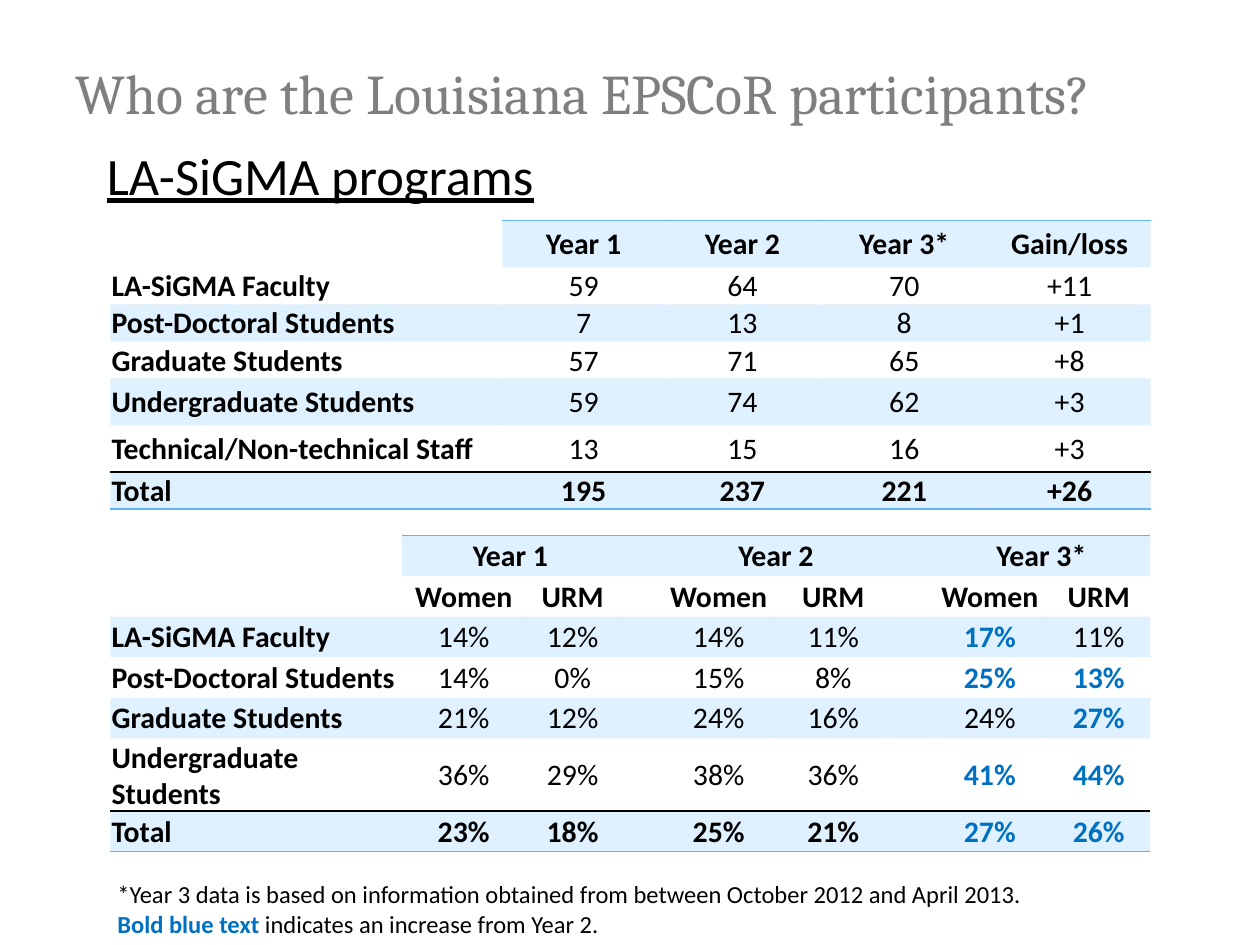
from lxml import etree
from pptx import Presentation
from pptx.dml.color import RGBColor
from pptx.enum import text
from pptx.oxml import ns
from pptx.util import Pt

COLORS = {"title": "7F7F7F", "text": "000000", "band": "61B4FA", "gain": "0070C0"}
NO_STYLE = "{2D5ABB26-0587-4C30-8999-92F81FD0307C}"

COUNT_WIDTHS = [224, 93, 88.5, 96.5, 92.5]
COUNT_HEIGHTS = [26.8, 20.9, 20.9, 20.9, 26.8, 26.8, 20.9]
COUNTS = [
    ["", "Year 1", "Year 2", "Year 3*", "Gain/loss"],
    ["LA-SiGMA Faculty", "59", "64", "70", "+11"],
    ["Post-Doctoral Students", "7", "13", "8", "+1"],
    ["Graduate Students", "57", "71", "65", "+8"],
    ["Undergraduate Students", "59", "74", "62", "+3"],
    ["Technical/Non-technical Staff", "13", "15", "16", "+3"],
    ["Total", "195", "237", "221", "+26"],
]

# Each year is a pair of columns; narrow empty columns separate the years
SHARE_WIDTHS = [166.5, 71, 53.5, 24, 65.5, 65.5, 24, 65.5, 59]
SHARE_HEIGHTS = [23.2] * 5 + [41.6, 23.2]
SHARES = [
    ["", "Year 1", "", "", "Year 2", "", "", "Year 3*", ""],
    ["", "Women", "URM", "", "Women", "URM", "", "Women", "URM"],
    ["LA-SiGMA Faculty", "14%", "12%", "", "14%", "11%", "", "17%", "11%"],
    ["Post-Doctoral Students", "14%", "0%", "", "15%", "8%", "", "25%", "13%"],
    ["Graduate Students", "21%", "12%", "", "24%", "16%", "", "24%", "27%"],
    ["Undergraduate Students", "36%", "29%", "", "38%", "36%", "", "41%", "44%"],
    ["Total", "23%", "18%", "", "25%", "21%", "", "27%", "26%"],
]


def set_font(font, size, color="text", name="Calibri", bold=False):
    font.size, font.name, font.bold = Pt(size), name, bold
    font.color.rgb = RGBColor.from_string(COLORS[color])


def add_text_box(slide, left, top, width, height):
    frame = slide.shapes.add_textbox(Pt(left), Pt(top), Pt(width), Pt(height)).text_frame
    frame.word_wrap = True
    return frame


def add_heading(slide, left, top, width, height, wording, size, **style):
    frame = add_text_box(slide, left, top, width, height)
    paragraph = frame.paragraphs[0]
    paragraph.text = wording
    set_font(paragraph.font, size, **style)
    return frame


def add_border(cell, side, color):
    properties = cell._tc.get_or_add_tcPr()
    line = etree.Element(ns.qn("a:ln" + side), w=str(Pt(1)))
    fill = etree.SubElement(line, ns.qn("a:solidFill"))
    etree.SubElement(fill, ns.qn("a:srgbClr"), val=COLORS[color])
    # Borders come before the fill, top before bottom
    properties.insert(len(properties.findall(ns.qn("a:lnT"))), line)


def fill_band(cell):
    cell.fill.solid()
    cell.fill.fore_color.rgb = RGBColor.from_string(COLORS["band"])
    color = cell._tc.tcPr.find(".//" + ns.qn("a:srgbClr"))
    etree.SubElement(color, ns.qn("a:alpha"), val="20000")


def is_gain(row, column):
    """True where a Year 3 share is above the Year 2 share three columns before."""
    if column < 7 or not row[column].endswith("%"):
        return False
    return int(row[column][:-1]) > int(row[column - 3][:-1])


def add_data_table(slide, left, top, widths, heights, rows, header_rows, spans=()):
    frame = slide.shapes.add_table(len(rows), len(widths), Pt(left), Pt(top),
                                   Pt(sum(widths)), Pt(sum(heights)))
    table = frame.table
    table._tbl.tblPr.find(ns.qn("a:tableStyleId")).text = NO_STYLE
    for column, width in zip(table.columns, widths):
        column.width = Pt(width)
    for table_row, height in zip(table.rows, heights):
        table_row.height = Pt(height)

    last = len(rows) - 1
    for i, row in enumerate(rows):
        for j, wording in enumerate(row):
            cell = table.cell(i, j)
            cell.margin_left = cell.margin_right = cell.margin_top = Pt(0.72)
            cell.margin_bottom = Pt(0)
            cell.vertical_anchor = text.MSO_ANCHOR.MIDDLE
            paragraph = cell.text_frame.paragraphs[0]
            paragraph.text = wording
            paragraph.alignment = text.PP_ALIGN.CENTER if j else text.PP_ALIGN.LEFT
            gain = is_gain(row, j)
            bold = gain or j == 0 or i < header_rows or i == last
            set_font(paragraph.font, 17, "gain" if gain else "text", bold=bold)

            # Every other row is tinted, except the empty corner
            corner = i == 0 and j == 0
            if i % 2 == 0 and not corner:
                fill_band(cell)
            else:
                cell.fill.background()
            if i == 0 and not corner:
                add_border(cell, "T", "band")
            if i == last - 1:
                add_border(cell, "B", "text")
            if i == last:
                add_border(cell, "T", "text")
                add_border(cell, "B", "band")
    for j in spans:
        table.cell(0, j).merge(table.cell(0, j + 1))


def add_footnote(slide, left, top, width, height):
    frame = add_text_box(slide, left, top, width, height)
    source = frame.paragraphs[0]
    source.text = ("*Year 3 data is based on information obtained from "
                   "between October 2012 and April 2013.")
    set_font(source.font, 14)
    legend = frame.add_paragraph()
    for wording, color in (("Bold blue text ", "gain"),
                           ("indicates an increase from Year 2.", "text")):
        run = legend.add_run()
        run.text = wording
        set_font(run.font, 14, color, bold=color == "gain")


def main():
    presentation = Presentation()
    presentation.slide_width, presentation.slide_height = Pt(720), Pt(540)
    slide = presentation.slides.add_slide(presentation.slide_layouts[6])

    # Title and subtitle
    title = add_heading(slide, 36, 21.6, 648, 62.6,
                        "Who are the Louisiana EPSCoR participants?", 32,
                        color="title", name="Cambria")
    title.vertical_anchor = text.MSO_ANCHOR.MIDDLE
    subtitle = add_heading(slide, 54, 78, 630, 45, "LA-SiGMA programs", 30)
    subtitle.paragraphs[0].font.underline = True

    # Head counts, then shares of women and minorities
    add_data_table(slide, 63, 126, COUNT_WIDTHS, COUNT_HEIGHTS, COUNTS, 1)
    add_data_table(slide, 63, 306, SHARE_WIDTHS, SHARE_HEIGHTS, SHARES, 2, (1, 4, 7))

    add_footnote(slide, 60, 499, 582, 41)
    presentation.save("out.pptx")


if __name__ == "__main__":
    main()
